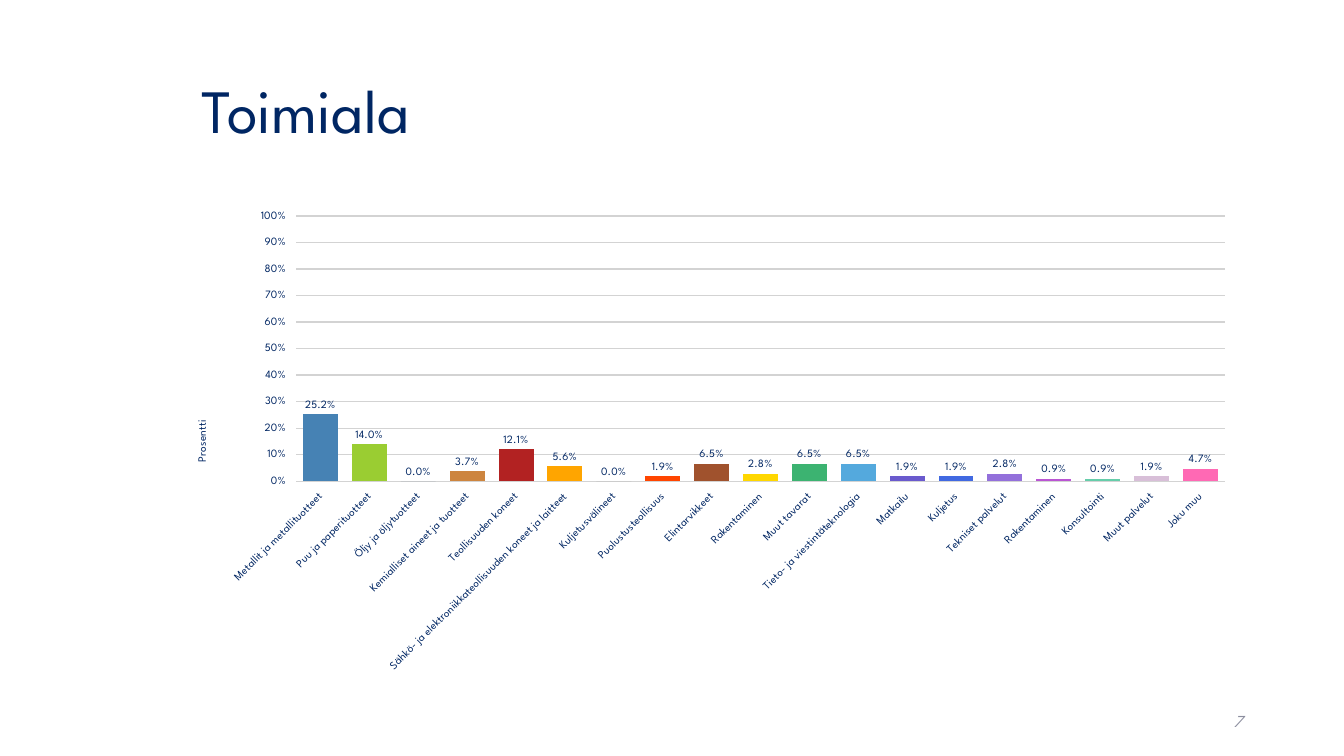
from lxml.etree import SubElement
from pptx import Presentation
from pptx.chart.data import CategoryChartData
from pptx.dml.color import RGBColor
from pptx.enum.chart import XL_CHART_TYPE, XL_LABEL_POSITION, XL_TICK_MARK
from pptx.enum.text import MSO_ANCHOR, PP_ALIGN
from pptx.oxml.ns import qn
from pptx.util import Inches, Pt

FONT = "League Spartan"
NAVY = RGBColor(0x00, 0x26, 0x63)
GREY = RGBColor(0x8C, 0x8E, 0x9F)
GRID = RGBColor(0xD3, 0xD3, 0xD3)

INDUSTRIES = [
    ("Metallit ja metallituotteet", 0.252, "4682B4"),
    ("Puu ja paperituotteet", 0.14, "9ACD32"),
    ("Öljy ja öljytuotteet", 0, "708090"),
    ("Kemialliset aineet ja tuotteet", 0.037, "CD853F"),
    ("Teollisuuden koneet", 0.121, "B22222"),
    ("Sähkö- ja elektroniikkateollisuuden koneet ja laitteet", 0.056, "FFA500"),
    ("Kuljetusvälineet", 0, "A1A1A1"),
    ("Puolustusteollisuus", 0.019, "FF4500"),
    ("Elintarvikkeet", 0.065, "A0522D"),
    ("Rakentaminen", 0.028, "FFD700"),
    ("Muut tavarat", 0.065, "3CB371"),
    ("Tieto- ja viestintäteknologia", 0.065, "54A9DD"),
    ("Matkailu", 0.019, "6A5ACD"),
    ("Kuljetus", 0.019, "4169E1"),
    ("Tekniset palvelut", 0.028, "9370DB"),
    ("Rakentaminen", 0.009, "BA55D3"),
    ("Konsultointi", 0.009, "66CDAA"),
    ("Muut palvelut", 0.019, "D8BFD8"),
    ("Joku muu", 0.047, "FF69B4"),
]


def set_font(font, size, color=NAVY):
    font.name = FONT
    font.size = Pt(size)
    font.color.rgb = color
    font.bold = False


presentation = Presentation()
presentation.slide_width = Inches(13.33)
presentation.slide_height = Inches(7.5)
slide = presentation.slides.add_slide(presentation.slide_layouts[5])

title = slide.shapes.title
title.left, title.top = Inches(1.75), Inches(0.4)
title.width, title.height = Inches(10.59), Inches(1.45)
title.text_frame.text = "Toimiala"
title.text_frame.margin_left = Inches(0.25)
title.text_frame.vertical_anchor = MSO_ANCHOR.MIDDLE
paragraph = title.text_frame.paragraphs[0]
paragraph.alignment = PP_ALIGN.LEFT
paragraph.line_spacing = 0.9
set_font(paragraph.font, 44)

page_number = slide.shapes.add_textbox(Inches(9.42), Inches(6.95), Inches(3), Inches(0.4))
page_number.text_frame.word_wrap = True
page_number.text_frame.vertical_anchor = MSO_ANCHOR.MIDDLE
paragraph = page_number.text_frame.paragraphs[0]
paragraph.text = "7"
paragraph.alignment = PP_ALIGN.RIGHT
paragraph.space_after = Pt(6)
set_font(paragraph.font, 12, GREY)
paragraph.font.italic = True

chart_data = CategoryChartData(number_format="0.0%")
chart_data.categories = [name for name, share, color in INDUSTRIES]
chart_data.add_series("Series 1", [share for name, share, color in INDUSTRIES])
chart = slide.shapes.add_chart(
    XL_CHART_TYPE.COLUMN_CLUSTERED,
    Inches(1.75), Inches(2), Inches(10.59), Inches(4.76), chart_data,
).chart
chart.has_legend = False
chart.has_title = False
set_font(chart.font, 18)

plot = chart.plots[0]
plot.vary_by_categories = False
plot.gap_width = 40
plot.overlap = -2
plot.has_data_labels = True
labels = plot.data_labels
labels.show_value = True
labels.number_format = "0.0%"
labels.number_format_is_linked = False
labels.position = XL_LABEL_POSITION.OUTSIDE_END
set_font(labels.font, 8)

series = plot.series[0]
for index, (name, share, color) in enumerate(INDUSTRIES):
    fill = series.points[index].format.fill
    fill.solid()
    fill.fore_color.rgb = RGBColor.from_string(color)

category_axis, value_axis = chart.category_axis, chart.value_axis
for axis in (category_axis, value_axis):
    axis.major_tick_mark = XL_TICK_MARK.OUTSIDE
    axis.format.line.fill.background()
    set_font(axis.tick_labels.font, 8)
category_axis._element.txPr.bodyPr.set("rot", "-2700000")

value_axis.minimum_scale = 0
value_axis.maximum_scale = 1
value_axis.major_unit = 0.1
value_axis.tick_labels.number_format = "0%"
value_axis.tick_labels.number_format_is_linked = False
value_axis.major_gridlines.format.line.color.rgb = GRID
value_axis.major_gridlines.format.line.width = Pt(1)
axis_title = value_axis.axis_title.text_frame
axis_title.text = "Prosentti"
set_font(axis_title.paragraphs[0].font, 8)

plot_area = chart._chartSpace.chart.plotArea
layout = plot_area.find(qn("c:layout"))
if layout is None:
    layout = SubElement(plot_area, qn("c:layout"))
    plot_area.insert(0, layout)
manual_layout = SubElement(layout, qn("c:manualLayout"))
for tag, value in (
    ("layoutTarget", "inner"), ("xMode", "edge"), ("yMode", "edge"),
    ("x", "0.112"), ("y", "0.03"), ("w", "0.87"), ("h", "0.553"),
):
    SubElement(manual_layout, qn(f"c:{tag}")).set("val", value)

presentation.save("out.pptx")
